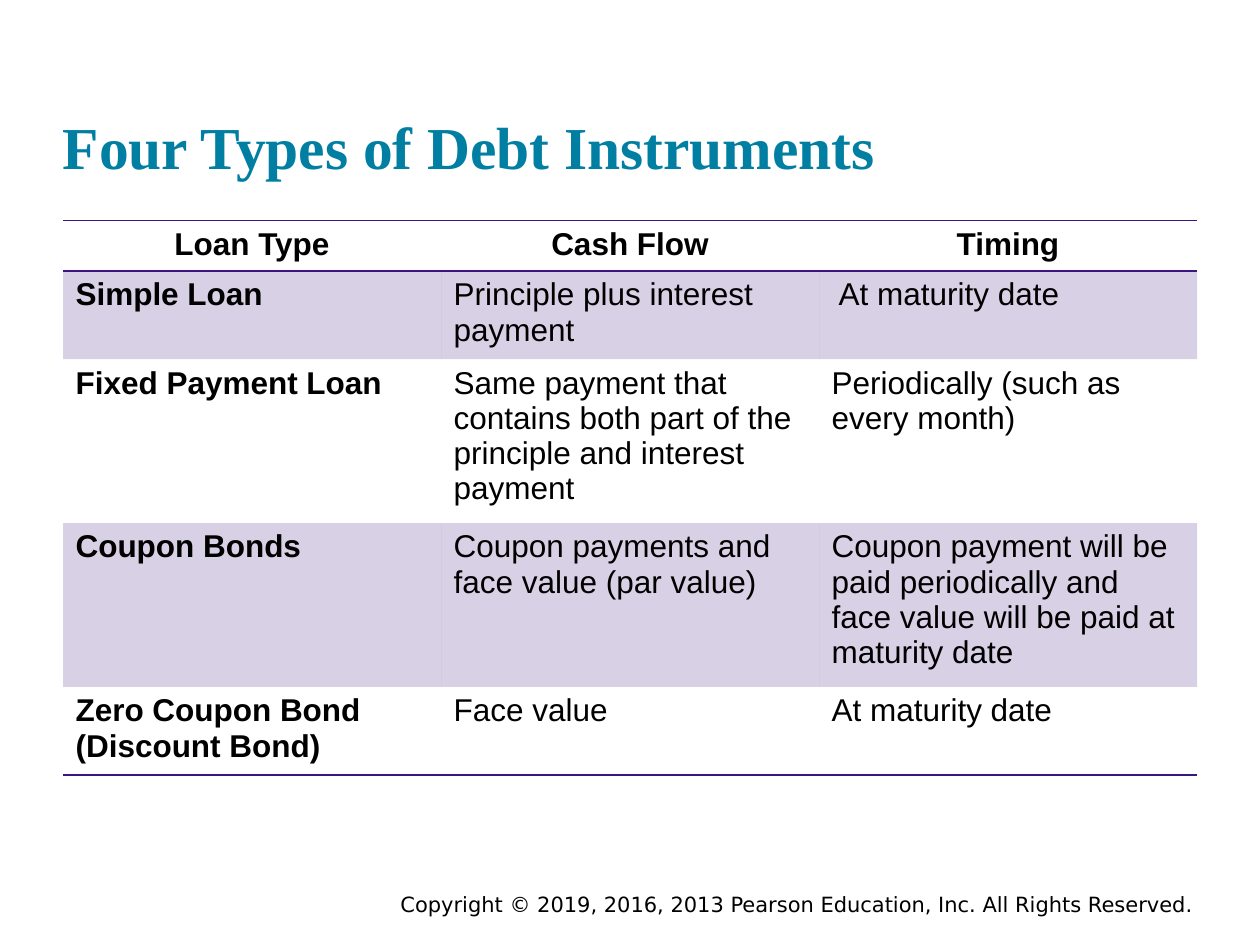
import pptx
import pptx.util
import pptx.dml.color
import pptx.enum.text
import lxml.etree
from dataclasses import dataclass

Pt = pptx.util.Pt
Align = pptx.enum.text.PP_ALIGN
Anchor = pptx.enum.text.MSO_ANCHOR


@dataclass(frozen=True)
class Theme:
    teal: str = "007FA3"
    violet: str = "3C1581"
    black: str = "000000"
    serif: str = "Times New Roman"
    sans: str = "Arial"
    small: str = "DejaVu Sans"
    title: int = 34
    body: int = 18
    foot: int = 12
    tint: int = 20


THEME = Theme()

ROWS = [
    ("Loan Type", "Cash Flow", "Timing"),
    ("Simple Loan", "Principle plus interest payment", " At maturity date"),
    ("Fixed Payment Loan",
     "Same payment that contains both part of the principle and interest payment",
     "Periodically (such as every month)"),
    ("Coupon Bonds", "Coupon payments and face value (par value)",
     "Coupon payment will be paid periodically and face value will be paid at maturity date"),
    ("Zero Coupon Bond (Discount Bond)", "Face value", "At maturity date"),
]
HEIGHTS = [27.4, 47.5, 87.8, 87.8, 47.5]


def add_run(para, text, font, size, color, bold=False):
    run = para.add_run()
    run.text = text
    run.font.name = font
    run.font.size = Pt(size)
    run.font.bold = bold
    run.font.color.rgb = pptx.dml.color.RGBColor.from_string(color)


def add_text(slide, box, text, font, size, color, bold=False,
             align=Align.LEFT, anchor=Anchor.TOP, inset=None):
    frame = slide.shapes.add_textbox(*map(Pt, box)).text_frame
    frame.word_wrap = True
    frame.vertical_anchor = anchor
    if inset is not None:
        frame.margin_left = frame.margin_right = Pt(inset)
        frame.margin_top = frame.margin_bottom = Pt(inset)
    para = frame.paragraphs[0]
    para.alignment = align
    add_run(para, text, font, size, color, bold)


def sub(parent, tag, **attrs):
    name = pptx.oxml.ns.qn("a:" + tag)
    return lxml.etree.SubElement(parent, name, attrs)


def set_fill(cell, banded):
    if not banded:
        cell.fill.background()
        return
    cell.fill.solid()
    color = cell.fill.fore_color
    color.rgb = pptx.dml.color.RGBColor.from_string(THEME.violet)
    rgb = cell.fill._xPr.find(".//" + pptx.oxml.ns.qn("a:srgbClr"))
    sub(rgb, "alpha", val=str(THEME.tint * 1000))


def set_lines(cell, ruled):
    # Borders come before the fill in the cell properties
    props = cell._tc.get_or_add_tcPr()
    for pos, side in enumerate("LRTB"):
        line = sub(props, "ln" + side, w=str(Pt(1)))
        if side in ruled:
            sub(sub(line, "solidFill"), "srgbClr", val=THEME.violet)
        else:
            sub(line, "noFill")
        props.insert(pos, line)


def add_table(slide, left, top, width):
    count = len(ROWS[0])
    table = slide.shapes.add_table(
        len(ROWS), count, Pt(left), Pt(top), Pt(width), Pt(sum(HEIGHTS))).table
    table.first_row = table.horz_banding = False
    for col in table.columns:
        col.width = Pt(width / count)

    last = len(ROWS) - 1
    rules = {0: "TB", 1: "T", last: "B"}
    for r, texts in enumerate(ROWS):
        table.rows[r].height = Pt(HEIGHTS[r])
        for c, text in enumerate(texts):
            cell = table.cell(r, c)
            set_fill(cell, r % 2 == 1)
            set_lines(cell, rules.get(r, ""))
            para = cell.text_frame.paragraphs[0]
            para.alignment = Align.CENTER if r == 0 else Align.LEFT
            add_run(para, text, THEME.sans, THEME.body, THEME.black,
                    bold=r == 0 or c == 0)


def main():
    deck = pptx.Presentation()
    deck.slide_width, deck.slide_height = Pt(720), Pt(540)
    slide = deck.slides.add_slide(deck.slide_layouts[6])

    # Footer
    add_text(slide, (212.4, 506.16, 486, 21.6),
             "Copyright © 2019, 2016, 2013 Pearson Education, Inc. All Rights Reserved.",
             THEME.small, THEME.foot, THEME.black, align=Align.CENTER)

    # Title
    add_text(slide, (36, 17.28, 648, 86.4), "Four Types of Debt Instruments",
             THEME.serif, THEME.title, THEME.teal, bold=True,
             anchor=Anchor.BOTTOM, inset=0)

    # Loan table
    add_table(slide, 36, 126, 648)

    deck.save("out.pptx")


if __name__ == "__main__":
    main()
